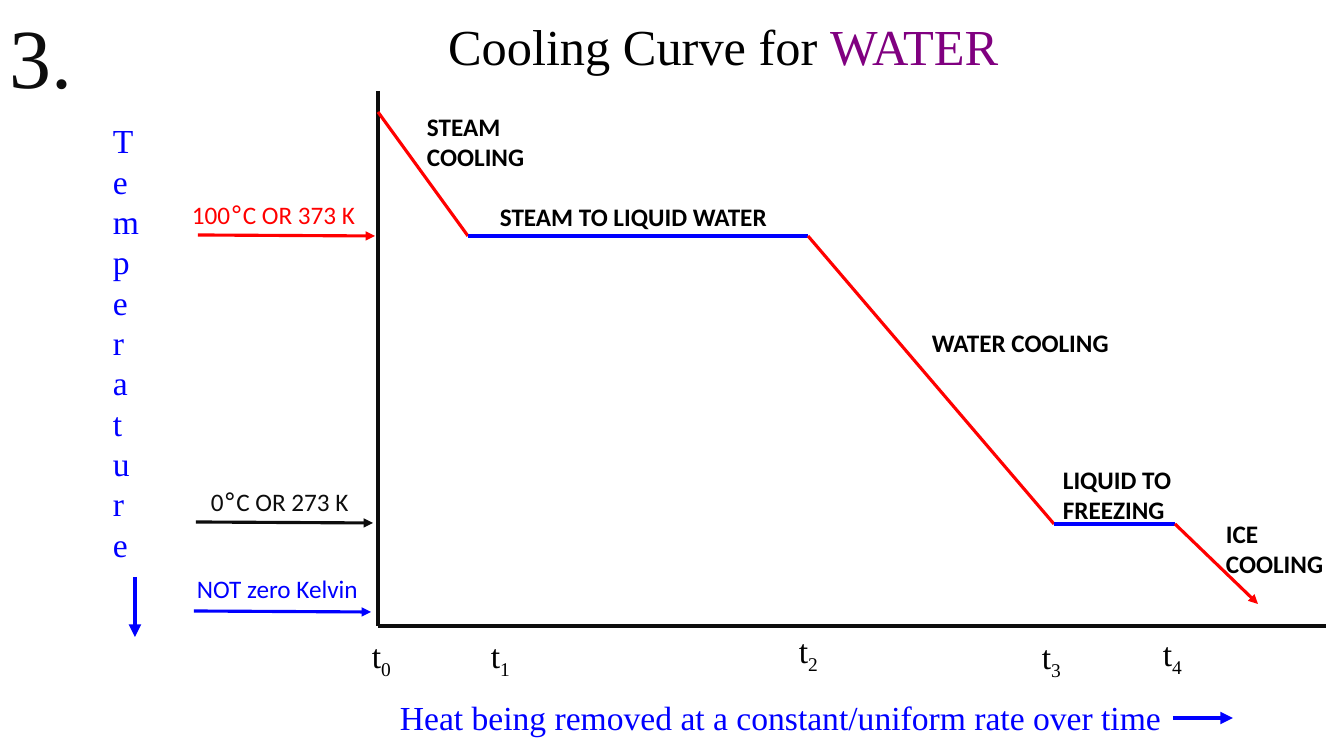
from dataclasses import dataclass
from itertools import cycle, pairwise

from lxml.etree import SubElement
from pptx import Presentation
from pptx.dml.color import RGBColor
from pptx.enum.shapes import MSO_CONNECTOR
from pptx.enum.text import MSO_ANCHOR, MSO_AUTO_SIZE, PP_ALIGN
from pptx.oxml.ns import qn
from pptx.util import Pt


@dataclass(frozen=True)
class Theme:
    serif: str = "Times New Roman"
    sans: str = "Calibri"
    sign: str = "DejaVu Sans"
    black: str = "000000"
    ink: str = "0D0D0D"
    red: str = "FF0000"
    blue: str = "0000FF"
    purple: str = "800080"
    small: int = 18
    mid: int = 24
    large: int = 36
    huge: int = 60
    thin: float = 2.25
    thick: int = 3


THEME = Theme()

# Content: boxes are left, top, width, height in px
WIDE, HIGH = 1344, 756
TITLE = ("Cooling Curve for ", "WATER", (438, 10, 743, 72))
NUMBER = ("3.", (0, 0, 103, 112))
X_NAME = ("Heat being removed at a constant/uniform rate over time",
          (390, 692, 917, 50))
Y_NAME = ("Temperature", (103, 75, 65, 534))

ORIGIN, X_END, Y_END = (378, 626), 1326, 91
CURVE = [(378, 112), (468, 236), (808, 236),
         (1054, 524), (1175, 524), (1258, 604)]
PHASES = [
    ("STEAM COOLING", (417, 106, 193, 72)),
    ("STEAM TO LIQUID WATER", (490, 196, 343, 40)),
    ("WATER COOLING", (922, 322, 200, 40)),
    ("LIQUID TO FREEZING", (1053, 459, 177, 72)),
    ("ICE COOLING", (1216, 513, 134, 72)),
]
# Label, its left and top, arrow start, colour
LEVELS = [
    ("100°C OR 373 K", (182, 194), (198, 235), THEME.red),
    ("0°C OR 273 K", (201, 481), (196, 522), THEME.ink),
    ("NOT zero Kelvin", (187, 568), (194, 611), THEME.blue),
]
TIMES = [(362, 630), (481, 630), (789, 625), (1032, 631), (1153, 628)]
TRENDS = [((135, 577), (135, 637)), ((1173, 718), (1233, 718))]


def emu(px):
    return round(px * 914400 / 100.8)


def style(font, size=None, face=None, color=None, bold=None):
    if size:
        font.size = Pt(size)
    if face:
        font.name = face
    if color:
        font.color.rgb = RGBColor.from_string(color)
    if bold:
        font.bold = True


def place(shape, box):
    shape.left, shape.top, shape.width, shape.height = map(emu, box)


def label(slide, box, size, face, color, *texts, bold=None):
    """Add a text box and return its frame and runs."""
    frame = slide.shapes.add_textbox(*map(emu, box)).text_frame
    frame.word_wrap = True
    para = frame.paragraphs[0]
    style(para.font, size, face, color, bold)
    runs = []
    for text in texts:
        run = para.add_run()
        run.text = text
        runs.append(run)
    return frame, runs


def stroke(slide, start, end, color, width=THEME.thin, arrow=False):
    link = slide.shapes.add_connector(
        MSO_CONNECTOR.STRAIGHT, *map(emu, (*start, *end)))
    link.line.color.rgb = RGBColor.from_string(color)
    link.line.width = Pt(width)
    props = link._element.spPr
    if arrow:
        SubElement(props.find(qn("a:ln")), qn("a:tailEnd"), type="triangle")
    SubElement(props, qn("a:effectLst"))


def head(slide):
    lead, word, box = TITLE
    title = slide.shapes.title
    place(title, box)
    frame = title.text_frame
    frame.word_wrap = True
    frame.auto_size = MSO_AUTO_SIZE.NONE
    frame.vertical_anchor = MSO_ANCHOR.TOP
    para = frame.paragraphs[0]
    para.alignment = PP_ALIGN.LEFT
    style(para.font, THEME.large, THEME.serif, THEME.black)
    para.add_run().text = lead
    run = para.add_run()
    run.text = word
    style(run.font, color=THEME.purple)
    text, box = NUMBER
    label(slide, box, THEME.huge, THEME.serif, THEME.ink, text)


def graph(slide):
    # Axes
    x, y = ORIGIN
    stroke(slide, (x, Y_END), ORIGIN, THEME.ink)
    stroke(slide, ORIGIN, (X_END, y), THEME.ink)
    # Cooling curve: slopes are red, plateaus blue
    for (start, end), color in zip(pairwise(CURVE),
                                   cycle((THEME.red, THEME.blue))):
        stroke(slide, start, end, color, arrow=end == CURVE[-1])
    for text, box in PHASES:
        label(slide, box, THEME.small, THEME.sans, THEME.black, text, bold=True)


def marks(slide):
    # Temperature levels
    for text, spot, (x, y), color in LEVELS:
        parts = [part for part in text.partition("°") if part]
        _, runs = label(slide, (*spot, 203, 40), THEME.small, THEME.sans,
                        color, *parts)
        for run in runs:
            if run.text == "°":
                style(run.font, face=THEME.sign)
        stroke(slide, (x, y), (x + 177, y + 1), color, arrow=True)
    # Times
    for step, spot in enumerate(TIMES):
        _, runs = label(slide, (*spot, 43, 50), THEME.mid, THEME.serif,
                        THEME.black, "t", str(step))
        runs[1]._r.get_or_add_rPr().set("baseline", "-25000")


def names(slide):
    text, box = X_NAME
    label(slide, box, THEME.mid, THEME.serif, THEME.blue, text)
    text, box = Y_NAME
    frame, _ = label(slide, box, THEME.mid, THEME.serif, THEME.blue, text)
    frame.vertical_anchor = MSO_ANCHOR.MIDDLE
    frame._txBody.bodyPr.set("vert", "wordArtVert")
    for start, end in TRENDS:
        stroke(slide, start, end, THEME.blue, THEME.thick, arrow=True)


def main():
    deck = Presentation()
    deck.slide_width, deck.slide_height = emu(WIDE), emu(HIGH)
    slide = deck.slides.add_slide(deck.slide_layouts.get_by_name("Title Only"))
    head(slide)
    graph(slide)
    marks(slide)
    names(slide)
    deck.save("out.pptx")


if __name__ == "__main__":
    main()
